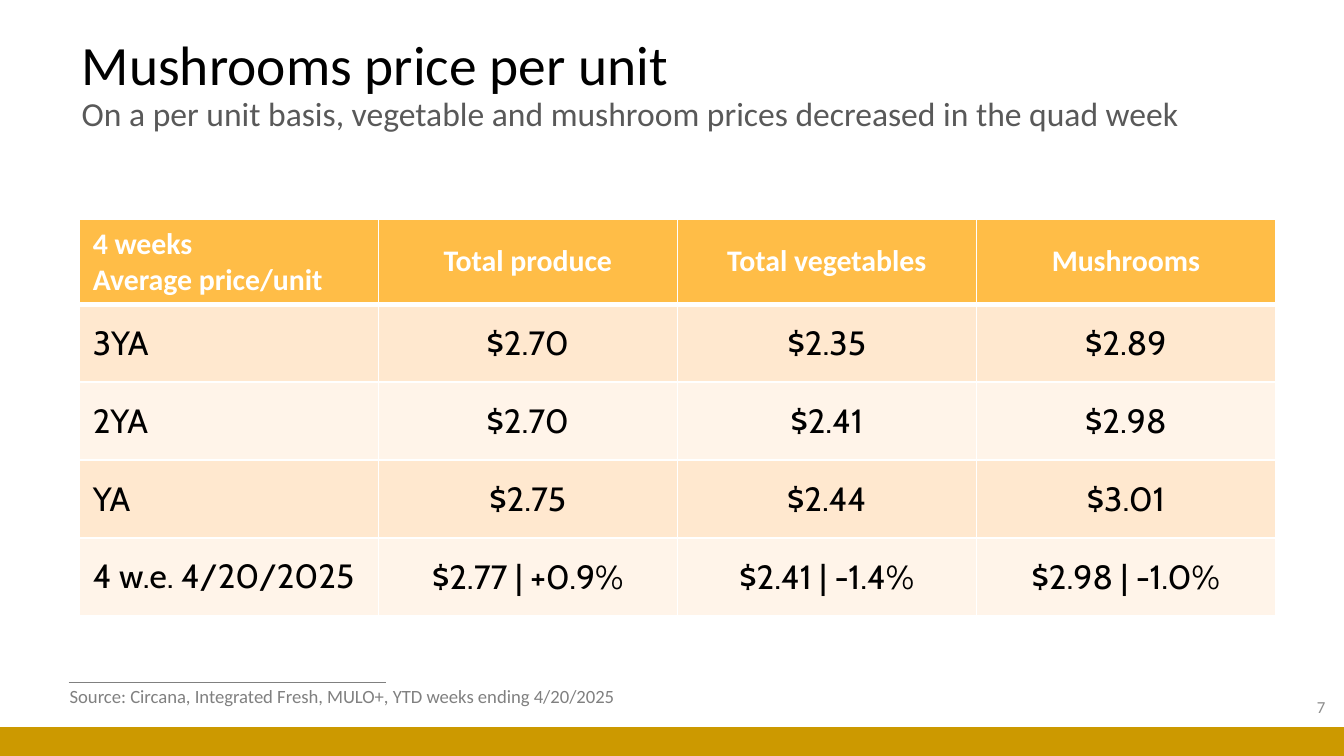
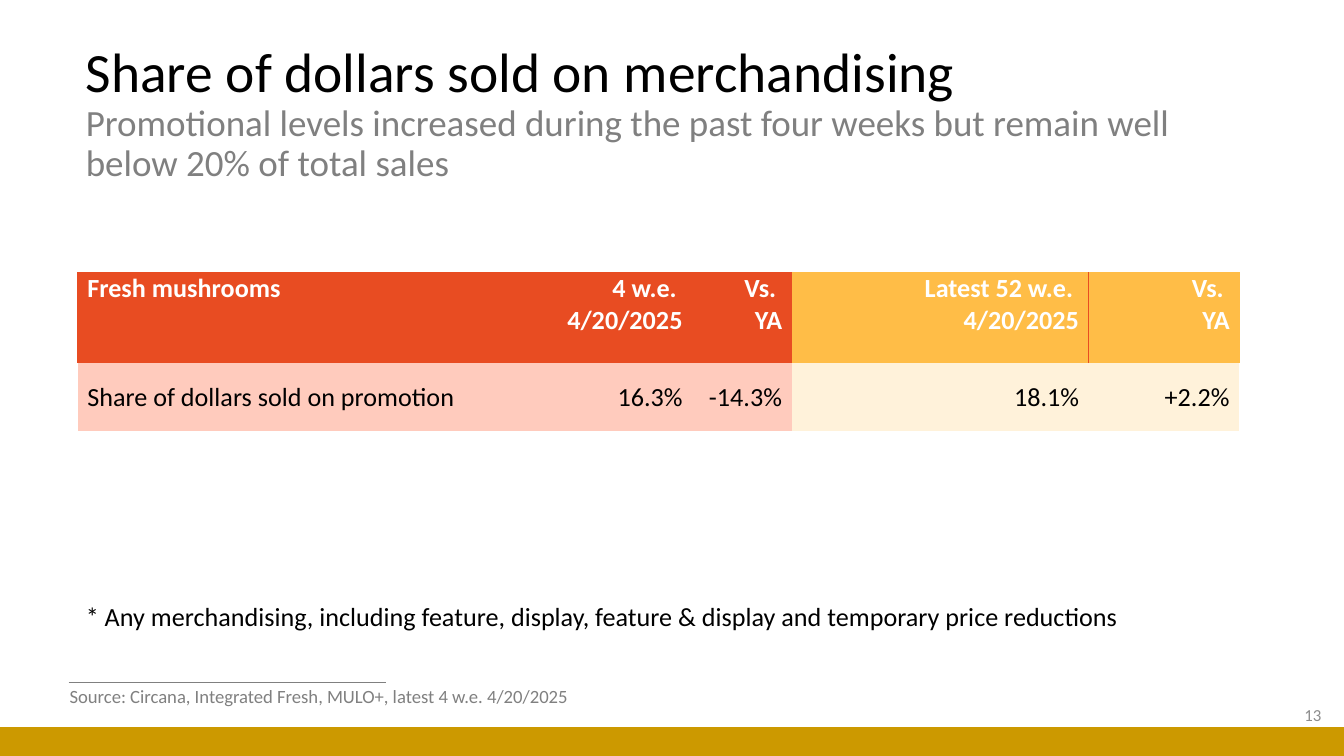
from lxml.etree import SubElement
from pptx import Presentation
from pptx.dml.color import RGBColor
from pptx.enum.shapes import MSO_CONNECTOR as Connector, MSO_SHAPE as Preset
from pptx.enum.text import MSO_ANCHOR as Anchor, MSO_AUTO_SIZE as AutoSize, PP_ALIGN as Align
from pptx.oxml.ns import qn
from pptx.util import Inches, Pt

WHITE, BLACK, GREY, DARK_GREY = "FFFFFF", "000000", "808080", "595959"
NUMBER_GREY, BAND, ORANGE, RED = "8C8C8C", "CC9900", "FFBD47", "E84C22"
PEACH, CREAM, PINK, PALE_YELLOW = "FFE8CF", "FFF4E9", "FFCBBD", "FFF2DA"
FONT, PRICE_FONT = "Calibri", "Cabin"
NO_STYLE = "{2D5ABB26-0587-4C30-8999-92F81FD0307C}"
PRICE_INSETS = (0.01, 0.01, 0.01, 0)
SHARE_INSETS = (0.07, 0, 0.07, 0)

PRICE = {
    "title": "Mushrooms price per unit",
    "subtitle": "On a per unit basis, vegetable and mushroom prices decreased in the quad week",
    "subtitle_style": (18, DARK_GREY),
    "title_box": (0.51, 0.37, 9.06, 0.54),
    "number": "7",
    "number_box": (7.71, 5.11, 2.25, 0.3),
    "source": "Source: Circana, Integrated Fresh, MULO+, YTD weeks ending 4/20/2025",
    "source_width": 4.41,
}
PRICE_ROWS = [
    ("4 weeks\nAverage price/unit", "Total produce", "Total vegetables", "Mushrooms"),
    ("3YA", "$2.70", "$2.35", "$2.89"),
    ("2YA", "$2.70", "$2.41", "$2.98"),
    ("YA", "$2.75", "$2.44", "$3.01"),
    ("4 w.e. 4/20/2025", "$2.77 | +0.9%", "$2.41 | -1.4%", "$2.98 | -1.0%"),
]
SHARE = {
    "title": "Share of dollars sold on merchandising",
    "subtitle": "Promotional levels increased during the past four weeks "
                "but remain well below 20% of total sales",
    "subtitle_style": (19.8, GREY),
    "title_box": (0.54, 0.31, 8.55, 1.09),
    "number": "13",
    "number_box": (7.68, 5.17, 2.25, 0.3),
    "source": "Source: Circana, Integrated Fresh, MULO+, latest 4 w.e. 4/20/2025",
    "source_width": 4.07,
}
SHARE_ROWS = [
    ("Fresh mushrooms", "4 w.e. \n4/20/2025", "Vs. \nYA", " Latest 52 w.e. \n4/20/2025", "Vs. \nYA"),
    ("Share of dollars sold on promotion", "16.3%", "-14.3%", "18.1%", "+2.2%"),
]
SHARE_NOTE = ("* Any merchandising, including feature, display, "
              "feature & display and temporary price reductions")


def rgb(color):
    return RGBColor.from_string(color)


def style(run, size, color, bold=False, font=FONT):
    run.font.name = font
    run.font.size = Pt(size)
    run.font.bold = bold
    run.font.color.rgb = rgb(color)


def write(frame, text, size, color, align=Align.LEFT, bold=False, font=FONT):
    frame.text = text
    for paragraph in frame.paragraphs:
        paragraph.alignment = align
        for run in paragraph.runs:
            style(run, size, color, bold, font)


def add_frame(slide, box, wrap=True, anchor=Anchor.MIDDLE):
    frame = slide.shapes.add_textbox(*map(Inches, box)).text_frame
    frame.word_wrap = wrap
    frame.vertical_anchor = anchor
    return frame


def add_note(slide, box, text, size, color):
    frame = add_frame(slide, box, wrap=False, anchor=Anchor.TOP)
    frame.auto_size = AutoSize.SHAPE_TO_FIT_TEXT
    write(frame, text, size, color)


def add_slide(deck, content):
    slide = deck.slides.add_slide(deck.slide_layouts[6])
    rule = slide.shapes.add_connector(
        Connector.STRAIGHT, Inches(0.51), Inches(5.08), Inches(2.87), Inches(5.08))
    rule.line.color.rgb = rgb(GREY)
    rule.line.width = Pt(0.5)
    SubElement(rule._element.spPr, qn("a:effectLst"))

    band_top = Inches(5.41)
    band = slide.shapes.add_shape(
        Preset.RECTANGLE, 0, band_top, deck.slide_width, deck.slide_height - band_top)
    band.shadow.inherit = False
    band.fill.solid()
    band.fill.fore_color.rgb = rgb(BAND)
    band.line.fill.background()

    heading = add_frame(slide, content["title_box"]).paragraphs[0]
    heading.text = content["title"] + "\v" + content["subtitle"]
    heading.line_spacing = 0.9
    title, subtitle = heading.runs
    style(title, 29.7, BLACK)
    style(subtitle, *content["subtitle_style"])

    write(add_frame(slide, content["number_box"]), content["number"], 9, NUMBER_GREY, Align.RIGHT)
    add_note(slide, (0.42, 5.05, content["source_width"], 0.27), content["source"], 10, GREY)
    return slide


def add_table(slide, rows, left, top, widths, heights):
    frame = slide.shapes.add_table(
        len(rows), len(widths), Inches(left), Inches(top),
        Inches(sum(widths)), Inches(sum(heights)))
    table = frame.table
    table.horz_banding = False
    table._tbl.tblPr.find(qn("a:tableStyleId")).text = NO_STYLE
    for column, width in zip(table.columns, widths):
        column.width = Inches(width)
    for row, height in zip(table.rows, heights):
        row.height = Inches(height)
    return table


def set_insets(cell, insets):
    cell.margin_left, cell.margin_top, cell.margin_right, cell.margin_bottom = map(Inches, insets)


def paint(cell, fill, borders):
    cell.fill.solid()
    cell.fill.fore_color.rgb = rgb(fill)
    properties = cell._tc.get_or_add_tcPr()
    for position, side in enumerate("LRTB"):
        color, width = borders.get(side, (None, 0))
        line = SubElement(properties, qn(f"a:ln{side}"), w=str(Pt(width)))
        if color:
            solid = SubElement(line, qn("a:solidFill"))
            SubElement(solid, qn("a:srgbClr"), val=color)
        else:
            SubElement(line, qn("a:noFill"))
        properties.insert(position, line)


def build_price(deck):
    slide = add_slide(deck, PRICE)
    table = add_table(slide, PRICE_ROWS, 0.59, 1.63, [8.9 / 4] * 4, [0.59] + [0.58] * 4)
    for r, row in enumerate(PRICE_ROWS):
        for c, text in enumerate(row):
            cell = table.cell(r, c)
            cell.vertical_anchor = Anchor.MIDDLE
            align = Align.CENTER if c else Align.LEFT
            borders = dict.fromkeys("LRTB", (WHITE, 1))
            if r == 0:
                borders["B"] = (WHITE, 3)
                fill = ORANGE
                write(cell.text_frame, text, 16, WHITE, align, bold=True)
            else:
                if r == 1:
                    borders["T"] = (WHITE, 3)
                fill = PEACH if r % 2 else CREAM
                write(cell.text_frame, text, 18, BLACK, align, font=PRICE_FONT)
                if c:
                    set_insets(cell, PRICE_INSETS)
            paint(cell, fill, borders)


def build_share(deck):
    slide = add_slide(deck, SHARE)
    add_note(slide, (0.54, 4.42, 8.1, 0.34), SHARE_NOTE, 14, BLACK)
    table = add_table(slide, SHARE_ROWS, 0.58, 2.03, [3, 1.57, 0.74, 2.21, 1.12], [0.67, 0.51])
    for r, row in enumerate(SHARE_ROWS):
        for c, text in enumerate(row):
            cell = table.cell(r, c)
            header, recent = r == 0, c < 3
            cell.vertical_anchor = Anchor.TOP if header else Anchor.MIDDLE
            set_insets(cell, SHARE_INSETS)
            write(cell.text_frame, text, 14, WHITE if header else BLACK,
                  Align.RIGHT if c else Align.LEFT, bold=header)
            borders = {}
            if header:
                fill = RED if recent else ORANGE
                borders = dict.fromkeys("LRT", (fill, 1))
                if c == 3:
                    borders.update(L=(RED, 1), R=(RED, 0.5))
                elif c == 4:
                    borders["L"] = (RED, 0.5)
            else:
                fill = PINK if recent else PALE_YELLOW
            paint(cell, fill, borders)


def main():
    deck = Presentation()
    deck.slide_width = Inches(10)
    deck.slide_height = deck.slide_width * 9 // 16
    build_price(deck)
    build_share(deck)
    deck.save("out.pptx")


if __name__ == "__main__":
    main()
